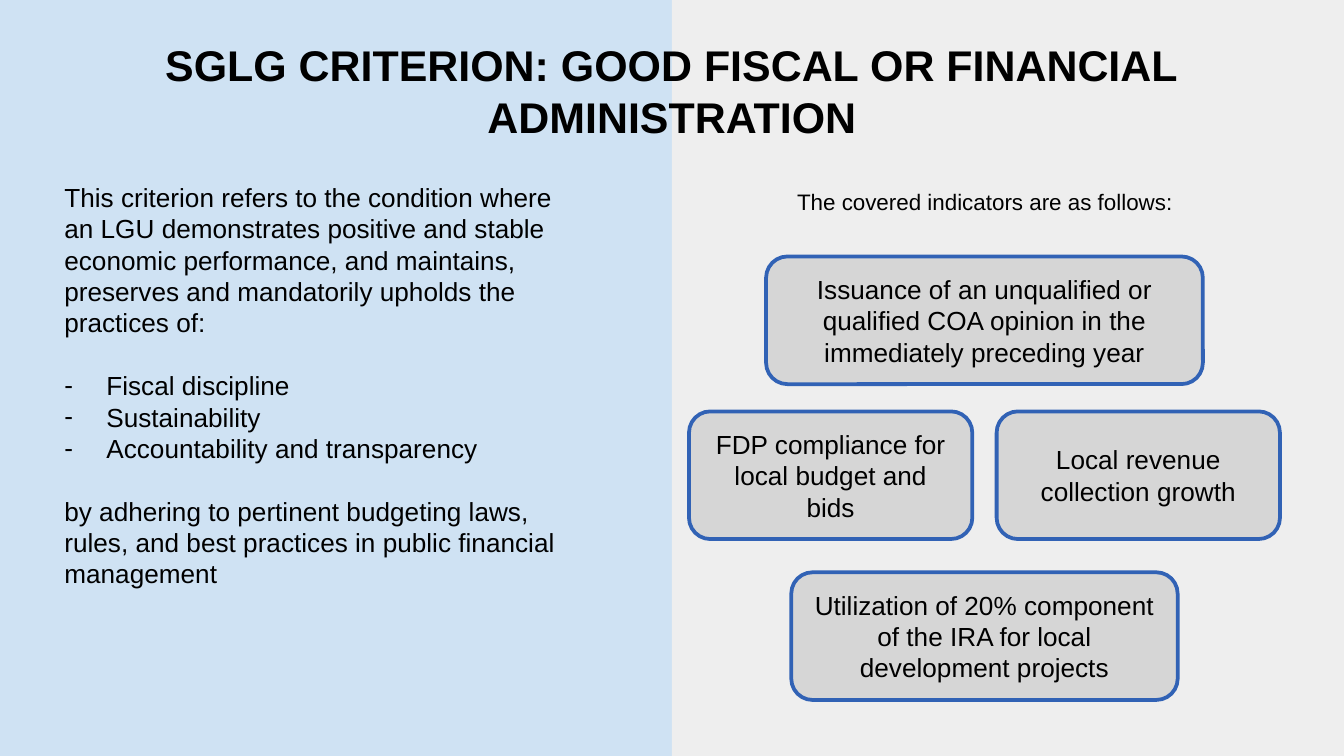
from lxml import etree
from pptx import Presentation
from pptx.dml.color import RGBColor
from pptx.enum import shapes, text
from pptx.oxml import ns
from pptx.util import Pt


def color(value):
    return RGBColor.from_string(value)


def style(para, size, align, bold=False):
    para.alignment = align
    para.font.size = Pt(size)
    for span in para.runs:
        span.font.name = "Arial"
        span.font.size = Pt(size)
        span.font.bold = bold
        span.font.color.rgb = color("000000")


LEFT, CENTER = text.PP_ALIGN.LEFT, text.PP_ALIGN.CENTER

deck = Presentation()
deck.slide_width, deck.slide_height = Pt(720), Pt(405)
page = deck.slides.add_slide(deck.slide_layouts[6])

# Two-tone background
page.background.fill.solid()
page.background.fill.fore_color.rgb = color("CFE2F3")
panel = page.shapes.add_shape(shapes.MSO_SHAPE.RECTANGLE, Pt(360), Pt(0), Pt(360), Pt(405))
panel.shadow.inherit = False
panel.fill.solid()
panel.fill.fore_color.rgb = color("EEEEEE")
panel.line.fill.background()

# Title and heading of the right half
headings = [
    ("SGLG CRITERION: GOOD FISCAL OR FINANCIAL ADMINISTRATION", 27.4, 13.7, 665.3, 70.6, 23, True),
    ("The covered indicators are as follows:", 393.8, 93.6, 267.8, 28.8, 12, False),
]
for words, left, top, width, height, size, bold in headings:
    box = page.shapes.add_textbox(Pt(left), Pt(top), Pt(width), Pt(height))
    frame = box.text_frame
    frame.word_wrap = True
    frame.margin_top = frame.margin_bottom = Pt(7.2)
    frame.text = words
    style(frame.paragraphs[0], size, CENTER, bold)

# Definition with its dashed list
practices = ["Fiscal discipline", "Sustainability", "Accountability and transparency"]
definition = [
    "This criterion refers to the condition where an LGU demonstrates positive and stable "
    "economic performance, and maintains, preserves and mandatorily upholds the practices of:",
    *practices,
    "by adhering to pertinent budgeting laws, rules, and best practices in public financial management",
]
box = page.shapes.add_textbox(Pt(27.4), Pt(93.6), Pt(277.9), Pt(227.5))
frame = box.text_frame
frame.word_wrap = True
for number, words in enumerate(definition):
    para = frame.paragraphs[0] if number == 0 else frame.add_paragraph()
    para.text = words
    style(para, 14, LEFT)
    if words in practices:
        props = para._p.get_or_add_pPr()
        props.set("marL", str(Pt(22.5)))
        props.set("indent", str(-Pt(22.5)))
        etree.SubElement(props, ns.qn("a:buFont")).set("typeface", "Arial")
        bullet = etree.SubElement(props, ns.qn("a:buChar"))
        bullet.set("char", "-")
        # The default run properties come after the bullet
        props.append(props.find(ns.qn("a:defRPr")))
for number in (1, 4):
    frame.paragraphs[number].space_before = Pt(16.8)

# Indicator cards, centred on the right half
MIDDLE, CARD_HEIGHT = 527.4, 68.4
cards = [
    ("Issuance of an unqualified or qualified COA opinion in the immediately preceding year", 0, 137.4, 234),
    ("FDP compliance for local budget and bids", -82.4, 220.4, 151.8),
    ("Local revenue collection growth", 82.4, 220.4, 151.8),
    ("Utilization of 20% component of the IRA for local development projects", 0, 306.6, 207),
]
for words, offset, top, width in cards:
    card = page.shapes.add_shape(
        shapes.MSO_SHAPE.ROUNDED_RECTANGLE,
        Pt(MIDDLE + offset - width / 2), Pt(top), Pt(width), Pt(CARD_HEIGHT))
    card.shadow.inherit = False
    card.fill.solid()
    card.fill.fore_color.rgb = color("D6D6D6")
    card.line.color.rgb = color("3162B5")
    card.line.width = Pt(2)
    card.text_frame.word_wrap = True
    card.text_frame.vertical_anchor = text.MSO_ANCHOR.MIDDLE
    card.text_frame.text = words
    style(card.text_frame.paragraphs[0], 14, CENTER)

deck.save("out.pptx")
